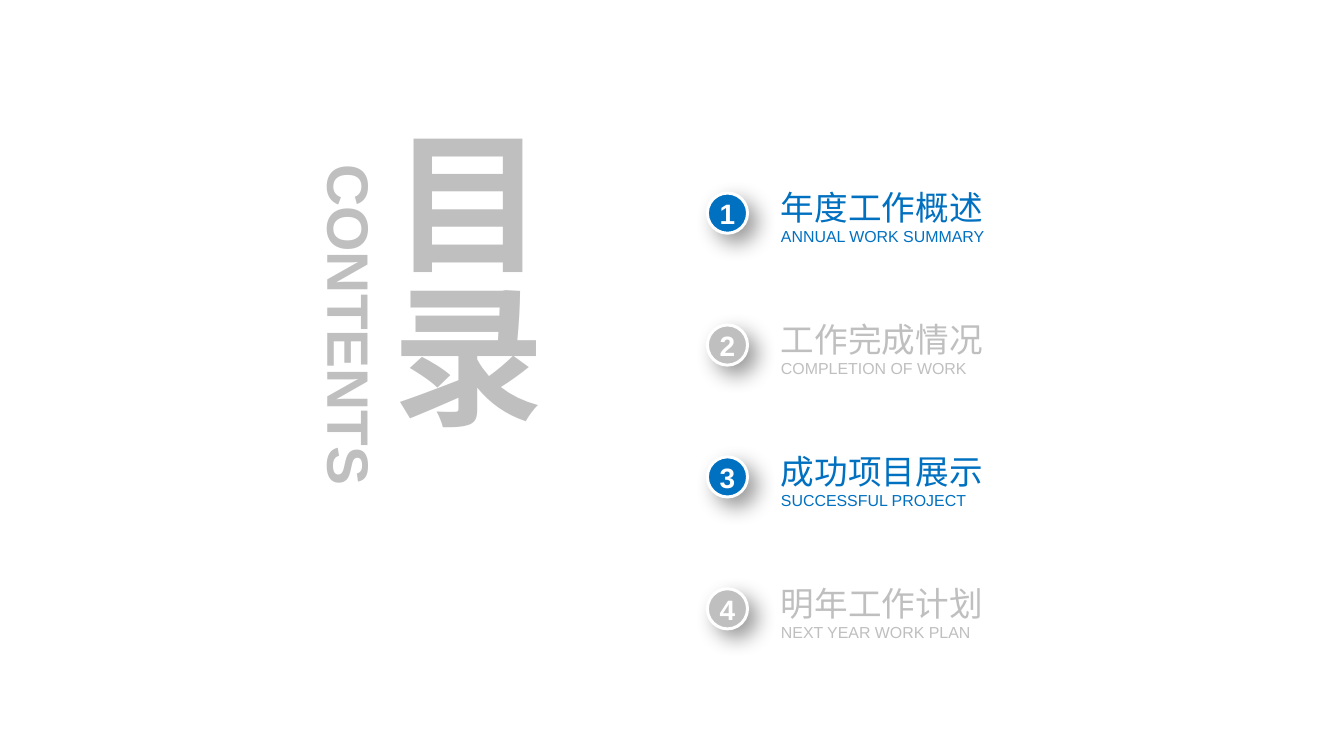
from pptx import Presentation
from pptx import util as u
from pptx.dml.color import RGBColor
from pptx.enum import shapes, text
from pptx.oxml import parse_xml
from pptx.oxml.ns import nsdecls, qn

COLORS = {"blue": "0070C0", "gray": "BFBFBF", "white": "FFFFFF", "shadow": "000000"}
FONT = "Arial"
TITLE = "目录"
SUBTITLE = "CONTENTS"
SECTIONS = [
    ("年度工作概述", "ANNUAL WORK SUMMARY", "blue"),
    ("工作完成情况", "COMPLETION OF WORK", "gray"),
    ("成功项目展示", "SUCCESSFUL PROJECT", "blue"),
    ("明年工作计划", "NEXT YEAR WORK PLAN", "gray"),
]
FIRST_TOP, ROW_STEP = 1.95, 1.38
BADGE_LEFT, BADGE_SIZE, BADGE_OFFSET = 7.4, 0.42, 0.07
LABEL_LEFT, LABEL_WIDTH, LABEL_HEIGHT = 8.17, 2.46, 0.63


def rgb(name):
    return RGBColor.from_string(COLORS[name])


def write_text(shape, lines, color, align, bold=False, anchor=text.MSO_ANCHOR.MIDDLE):
    frame = shape.text_frame
    frame.word_wrap = True
    frame.margin_left = frame.margin_right = frame.margin_top = frame.margin_bottom = 0
    frame.vertical_anchor = anchor
    for index, (content, size) in enumerate(lines):
        paragraph = frame.add_paragraph() if index else frame.paragraphs[0]
        paragraph.text = content
        paragraph.alignment = align
        paragraph.font.name = FONT
        paragraph.font.size = u.Pt(size)
        paragraph.font.bold = bold
        paragraph.font.color.rgb = rgb(color)


def add_heading(slide, box, content, size, align, anchor):
    heading = slide.shapes.add_textbox(*map(u.Inches, box))
    write_text(heading, [(content, size)], "gray", align, bold=True, anchor=anchor)
    return heading


def add_label(slide, top, lines, color):
    right, bottom = LABEL_LEFT + LABEL_WIDTH, top + LABEL_HEIGHT
    builder = slide.shapes.build_freeform(u.Inches(LABEL_LEFT), u.Inches(top))
    corners = [(right, top), (right, bottom), (LABEL_LEFT, bottom)]
    builder.add_line_segments([(u.Inches(x), u.Inches(y)) for x, y in corners])
    label = builder.convert_to_shape()
    label.fill.background()
    label.line.fill.background()
    label.shadow.inherit = False
    write_text(label, lines, color, text.PP_ALIGN.LEFT)
    label.text_frame.auto_size = text.MSO_AUTO_SIZE.SHAPE_TO_FIT_TEXT


def add_shadow(shape):
    shape.shadow.inherit = False
    effects = shape.element.spPr.find(qn("a:effectLst"))
    effects.append(parse_xml(
        f'<a:outerShdw {nsdecls("a")} blurRad="{u.Pt(16)}" dist="{u.Pt(9)}" '
        f'dir="{45 * 60000}" algn="tl" rotWithShape="0">'
        f'<a:srgbClr val="{COLORS["shadow"]}"><a:alpha val="40000"/></a:srgbClr>'
        '</a:outerShdw>'))


def add_badge(slide, number, top, color):
    badge = slide.shapes.add_shape(
        shapes.MSO_SHAPE.OVAL, u.Inches(BADGE_LEFT), u.Inches(top),
        u.Inches(BADGE_SIZE), u.Inches(BADGE_SIZE))
    badge.fill.solid()
    badge.fill.fore_color.rgb = rgb(color)
    badge.line.color.rgb = rgb("white")
    badge.line.width = u.Pt(2.25)
    add_shadow(badge)
    write_text(badge, [(str(number), 21.1)], "white", text.PP_ALIGN.CENTER, bold=True)


def main():
    presentation = Presentation()
    presentation.slide_width = u.Inches(14.06)
    presentation.slide_height = u.Inches(7.91)
    slide = presentation.slides.add_slide(presentation.slide_layouts[6])

    for index, (heading, translation, color) in enumerate(SECTIONS):
        top = FIRST_TOP + index * ROW_STEP
        add_badge(slide, index + 1, top + BADGE_OFFSET, color)
        add_label(slide, top, [(heading, 25.3), (translation, 12)], color)

    title = add_heading(slide, (3.88, 1.32, 1.94, 4.15), TITLE, 115,
                        text.PP_ALIGN.LEFT, text.MSO_ANCHOR.MIDDLE)
    title.text_frame._txBody.bodyPr.set("vert", "eaVert")

    subtitle = add_heading(slide, (1.86, 3.03, 3.61, 0.74), SUBTITLE, 44,
                           text.PP_ALIGN.CENTER, text.MSO_ANCHOR.TOP)
    subtitle.rotation = 90

    presentation.save("out.pptx")


if __name__ == "__main__":
    main()
